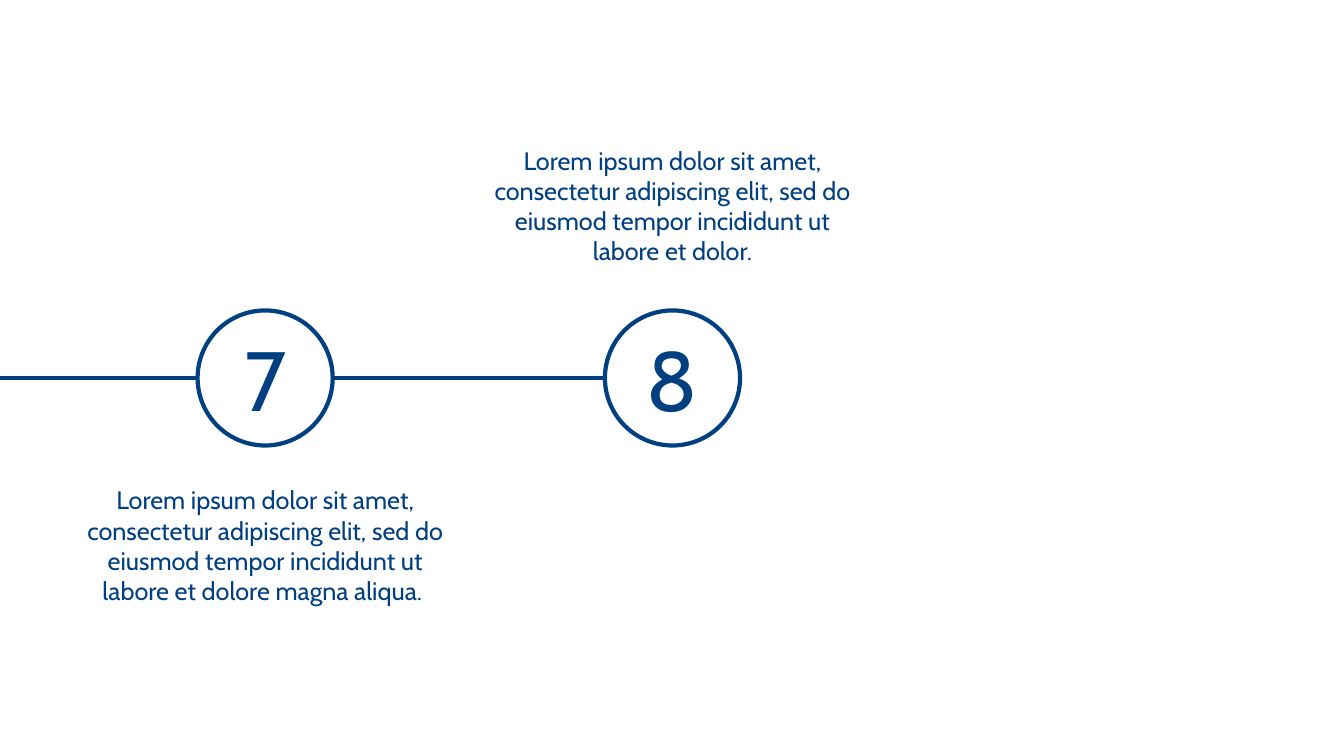
from lxml import etree
from pptx import Presentation
from pptx.dml.color import RGBColor
from pptx.enum.shapes import MSO_CONNECTOR, MSO_SHAPE
from pptx.enum.text import MSO_ANCHOR, MSO_AUTO_SIZE, PP_ALIGN
from pptx.oxml.ns import qn
from pptx.util import Inches, Pt

STRAIGHT = MSO_CONNECTOR.STRAIGHT
OVAL = MSO_SHAPE.OVAL
CENTER = PP_ALIGN.CENTER
MIDDLE = MSO_ANCHOR.MIDDLE
GROW = MSO_AUTO_SIZE.SHAPE_TO_FIT_TEXT

# Step number, top of its description, description
STEPS = [
    ("7", 4.76, "Lorem ipsum dolor sit amet, consectetur adipiscing elit, "
                "sed do eiusmod tempor incididunt ut labore et dolore magna aliqua. "),
    ("8", 1.39, "Lorem ipsum dolor sit amet, consectetur adipiscing elit, "
                "sed do eiusmod tempor incididunt ut labore et dolor."),
]

COLORS = {"navy": "003F80", "white": "FFFFFF"}
FONT = "Cabin"
SLIDE_W, SLIDE_H = 13.33, 7.5
AXIS_Y = SLIDE_H / 2
AXIS_END = 7.2
FIRST_CENTER, STEP_GAP = 2.63, 4.04
CIRCLE = 1.34
TEXT_W, TEXT_H = 4.01, 1.36


def rgb(name):
    return RGBColor.from_string(COLORS[name])


def style_outline(line):
    line.color.rgb = rgb("navy")
    line.width = Pt(3)


def write(frame, text, size):
    frame.word_wrap = True
    paragraph = frame.paragraphs[0]
    paragraph.text = text
    paragraph.alignment = CENTER
    paragraph.font.name = FONT
    paragraph.font.size = Pt(size)
    paragraph.font.color.rgb = rgb("navy")


def add_axis(slide):
    axis = slide.shapes.add_connector(
        STRAIGHT, 0, Inches(AXIS_Y), Inches(AXIS_END), Inches(AXIS_Y))
    style_outline(axis.line)
    etree.SubElement(axis._element.spPr, qn("a:effectLst"))


def add_step(slide, center, number, text_top, description):
    circle = slide.shapes.add_shape(
        OVAL, Inches(center - CIRCLE / 2), Inches(AXIS_Y - CIRCLE / 2),
        Inches(CIRCLE), Inches(CIRCLE))
    circle.shadow.inherit = False
    circle.fill.solid()
    circle.fill.fore_color.rgb = rgb("white")
    style_outline(circle.line)
    circle.text_frame.vertical_anchor = MIDDLE
    write(circle.text_frame, number, 60)

    caption = slide.shapes.add_textbox(
        Inches(center - TEXT_W / 2), Inches(text_top),
        Inches(TEXT_W), Inches(TEXT_H))
    caption.text_frame.auto_size = GROW
    write(caption.text_frame, description, 18)


def main():
    deck = Presentation()
    deck.slide_width = Inches(SLIDE_W)
    deck.slide_height = Inches(SLIDE_H)
    slide = deck.slides.add_slide(deck.slide_layouts[6])
    add_axis(slide)
    for index, step in enumerate(STEPS):
        add_step(slide, FIRST_CENTER + index * STEP_GAP, *step)
    deck.save("out.pptx")


if __name__ == "__main__":
    main()
